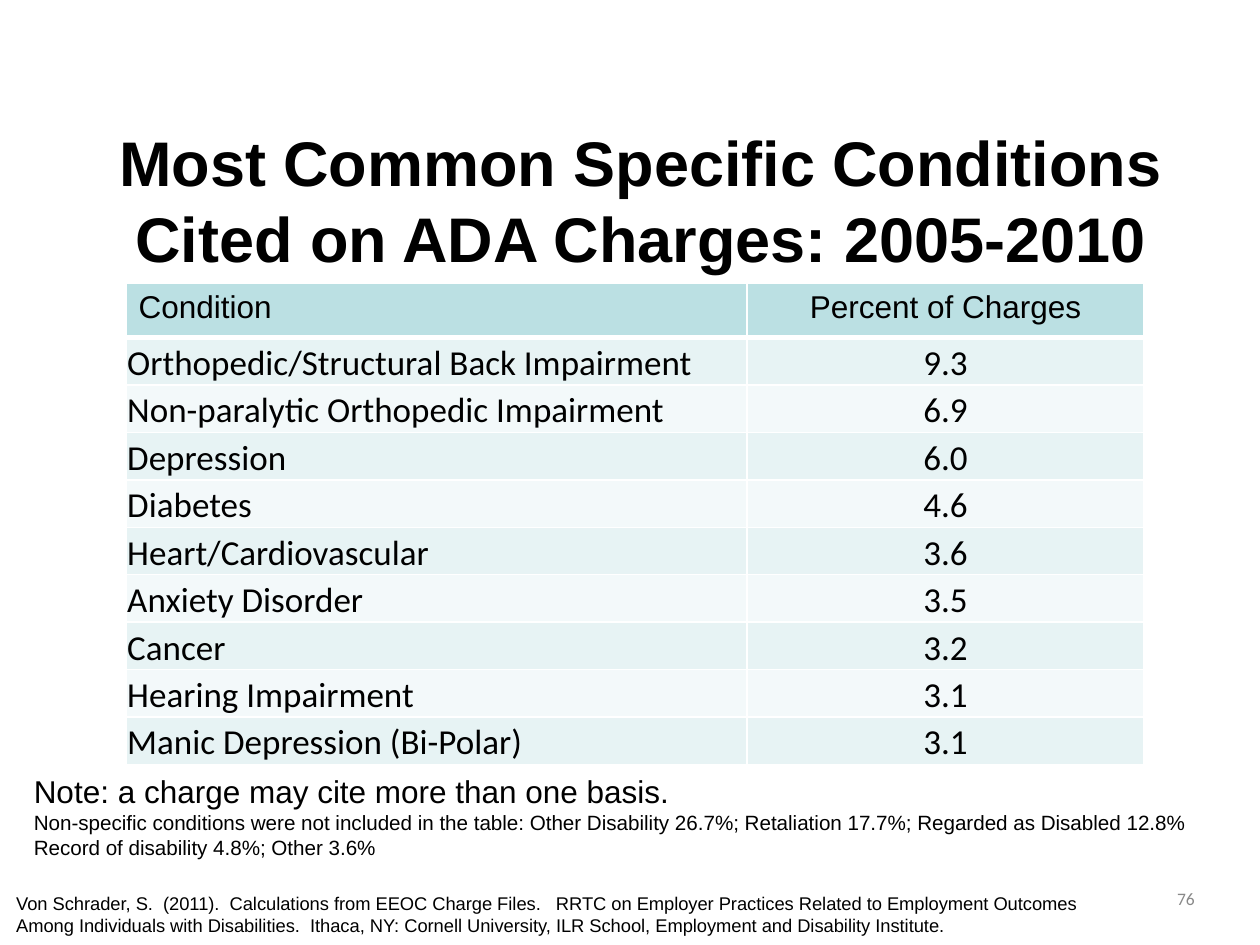
from dataclasses import dataclass

from lxml import etree
from pptx import Presentation
from pptx.dml.color import RGBColor
from pptx.enum.text import MSO_ANCHOR, PP_ALIGN
from pptx.oxml.ns import qn
from pptx.util import Inches, Pt

LEFT, CENTER, RIGHT = PP_ALIGN.LEFT, PP_ALIGN.CENTER, PP_ALIGN.RIGHT
TOP, MIDDLE, BOTTOM = MSO_ANCHOR.TOP, MSO_ANCHOR.MIDDLE, MSO_ANCHOR.BOTTOM


@dataclass(frozen=True)
class Theme:
    heading_font: str = "Arial"
    body_font: str = "Calibri"
    ink: str = "000000"
    muted: str = "898989"
    rule: str = "FFFFFF"
    header_fill: str = "BBE0E3"
    bands: tuple = ("E7F3F4", "F3F9FA")
    title_size: float = 36
    header_size: float = 18
    body_size: float = 20
    detail_size: float = 11.8
    source_size: float = 10.5
    number_size: float = 10


class SlideBuilder:
    """Places elements by percentages of the slide's width and height."""

    def __init__(self, deck, theme):
        self.deck = deck
        self.theme = theme
        self.page = deck.slides.add_slide(deck.slide_layouts[6])

    def across(self, share):
        return round(self.deck.slide_width * share / 100)

    def down(self, share):
        return round(self.deck.slide_height * share / 100)

    def area(self, left, top, width, height):
        return self.across(left), self.down(top), self.across(width), self.down(height)

    def style(self, para, size, font, color=None, align=LEFT, bold=False):
        para.alignment = align
        para.font.size = Pt(size)
        para.font.name = font
        para.font.bold = bold
        para.font.color.rgb = RGBColor.from_string(color or self.theme.ink)

    def text(self, area, lines, font, anchor=TOP, **look):
        """Adds a box; lines holds one (wording, size) pair per paragraph."""
        frame = self.page.shapes.add_textbox(*self.area(*area)).text_frame
        frame.word_wrap = True
        frame.vertical_anchor = anchor
        for index, (wording, size) in enumerate(lines):
            para = frame.add_paragraph() if index else frame.paragraphs[0]
            para.text = wording
            self.style(para, size, font, **look)

    def border(self, cell, side, points):
        line = etree.SubElement(cell._tc.get_or_add_tcPr(), qn(f"a:ln{side}"), w=str(Pt(points)))
        fill = etree.SubElement(line, qn("a:solidFill"))
        etree.SubElement(fill, qn("a:srgbClr"), val=self.theme.rule)

    def cell(self, cell, wording, fill, align, is_header):
        theme = self.theme
        for side in "LRTB":
            self.border(cell, side, 3 if is_header and side == "B" else 1)
        cell.fill.solid()
        cell.fill.fore_color.rgb = RGBColor.from_string(fill)
        if is_header:
            margins, size, font = (0.1, 0.05, 0.1, 0.05), theme.header_size, theme.heading_font
        else:
            margins, size, font = (0.01, 0.01, 0.01, 0), theme.body_size, theme.body_font
        (cell.margin_left, cell.margin_top,
         cell.margin_right, cell.margin_bottom) = map(Inches, margins)
        cell.vertical_anchor = TOP if is_header else BOTTOM
        para = cell.text_frame.paragraphs[0]
        para.text = wording
        self.style(para, size, font, align=align)

    def table(self, area, rows, column_widths, header_height):
        grid = self.page.shapes.add_table(len(rows), len(column_widths), *self.area(*area)).table
        for column, width in zip(grid.columns, column_widths):
            column.width = self.across(width)
        row_height = (area[3] - header_height) / (len(rows) - 1)
        for index, values in enumerate(rows):
            is_header = index == 0
            grid.rows[index].height = self.down(header_height if is_header else row_height)
            fill = self.theme.header_fill if is_header else self.theme.bands[(index - 1) % 2]
            for column, (wording, align) in enumerate(zip(values, (LEFT, CENTER))):
                self.cell(grid.cell(index, column), wording, fill, align, is_header)


CONDITIONS = [
    ("Condition", "Percent of Charges"),
    ("Orthopedic/Structural Back Impairment", "9.3"),
    ("Non-paralytic Orthopedic Impairment", "6.9"),
    ("Depression", "6.0"),
    ("Diabetes", "4.6"),
    ("Heart/Cardiovascular", "3.6"),
    ("Anxiety Disorder", "3.5"),
    ("Cancer", "3.2"),
    ("Hearing Impairment", "3.1"),
    ("Manic Depression (Bi-Polar)", "3.1"),
]


def main():
    deck = Presentation()
    deck.slide_width, deck.slide_height = Inches(10), Inches(7.5)
    theme = Theme()
    slide = SlideBuilder(deck, theme)

    # Title
    slide.text((4.2, 14.4, 93.3, 13.33),
               [("Most Common Specific Conditions Cited on ADA Charges: 2005-2010",
                 theme.title_size)],
               theme.heading_font, anchor=MIDDLE, align=CENTER, bold=True)

    # Conditions and their share of charges
    slide.table((10, 30, 80.8, 50.93), CONDITIONS,
                column_widths=(49.3, 31.5), header_height=5.73)

    # Notes under the table
    slide.text((1.7, 81.07, 98.3, 10.67),
               [("Note: a charge may cite more than one basis.", theme.header_size),
                ("Non-specific conditions were not included in the table: "
                 "Other Disability 26.7%; Retaliation 17.7%; Regarded as Disabled 12.8% "
                 "Record of disability 4.8%; Other 3.6%", theme.detail_size)],
               theme.heading_font)

    # Source and page number
    slide.text((0.3, 93.73, 86.9, 6.27),
               [("Von Schrader, S.  (2011).  Calculations from EEOC Charge Files.   "
                 "RRTC on Employer Practices Related to Employment Outcomes Among Individuals "
                 "with Disabilities.  Ithaca, NY: Cornell University, ILR School, "
                 "Employment and Disability Institute.", theme.source_size)],
               theme.heading_font)
    slide.text((75, 93.33, 20.8, 6.67), [("76", theme.number_size)],
               theme.body_font, color=theme.muted, align=RIGHT)

    deck.save("out.pptx")


if __name__ == "__main__":
    main()
